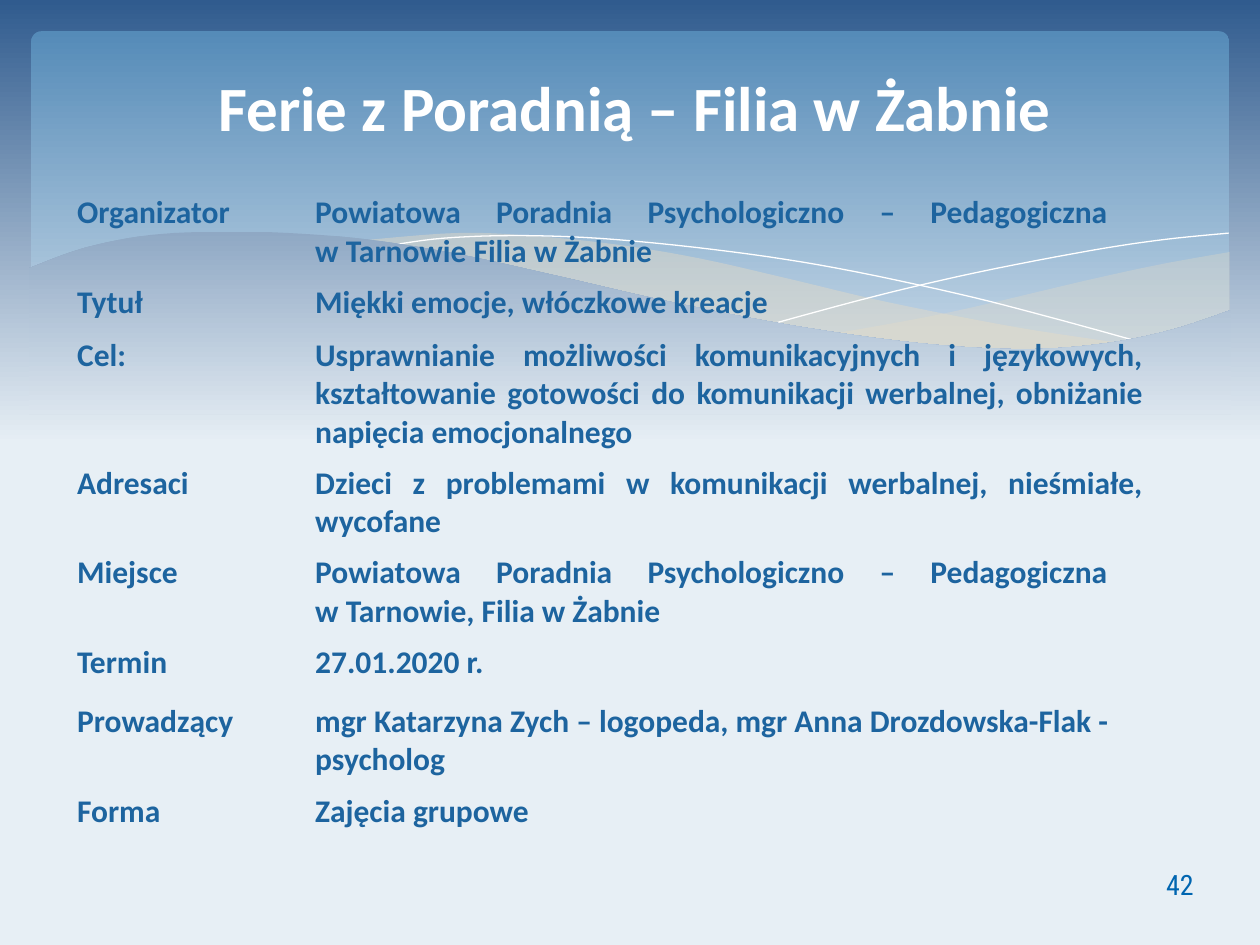
from dataclasses import dataclass

import pptx
import pptx.dml.color
import pptx.enum.shapes
import pptx.enum.text
import pptx.util
from lxml import etree
from pptx.oxml.ns import qn

Cm = pptx.util.Cm
Pt = pptx.util.Pt
RGBColor = pptx.dml.color.RGBColor
Align = pptx.enum.text.PP_ALIGN
Anchor = pptx.enum.text.MSO_ANCHOR
Point = tuple[float, float]

WHITE = RGBColor(0xFF, 0xFF, 0xFF)
SKY_TOP = RGBColor(0x30, 0x5B, 0x8E)
SKY_BOTTOM = RGBColor(0xE7, 0xEF, 0xF5)
PANEL_TOP = RGBColor(0x55, 0x8B, 0xB8)
PANEL_BOTTOM = RGBColor(0xBF, 0xD3, 0xE4)
SAND = RGBColor(0xEB, 0xDD, 0xC3)
TABLE_TEXT = RGBColor(0x1D, 0x64, 0x9F)
NUMBER_TEXT = RGBColor(0x00, 0x65, 0xB0)

PAGE_WIDTH, PAGE_HEIGHT = 25.4, 19.05
SKY_END = 0.47
WAVE_TOP, WAVE_BOTTOM = 4.67, 8.36
NO_GRID_STYLE = "{2D5ABB26-0587-4C30-8999-92F81FD0307C}"


@dataclass
class Ribbon:
    upper: list[Point]
    lower: list[Point]
    opacity: int


@dataclass
class Row:
    label: str
    text: str
    height: float
    align: Align = Align.JUSTIFY


RIBBONS = [
    Ribbon([(24.79, 5.08), (23.39, 5.33), (21.87, 5.66), (19.13, 6.3), (16.79, 6.73)],
           [(16.79, 6.73), (18.26, 6.91), (19.84, 7.04), (21.44, 7.04), (22.99, 6.83),
            (24.1, 6.53), (24.79, 6.27)], 29),
    Ribbon([(22.68, 6.93), (20.5, 6.6), (17.93, 6.1), (15.98, 5.64), (14.1, 5.21),
            (12.42, 4.93), (10.67, 4.75), (9.17, 4.7), (7.26, 4.85)],
           [(7.26, 4.85), (9.19, 5.16), (11.4, 5.64), (14.38, 6.3), (16.51, 6.71),
            (18.34, 6.96), (20.22, 7.06), (21.54, 7.04), (22.68, 6.93)], 40),
]
THREADS = [
    [(7.85, 4.95), (8.97, 4.8), (10.57, 4.75), (12.42, 4.83), (14.78, 5.08),
     (16.89, 5.41), (19.3, 5.92), (21.11, 6.38), (23.04, 6.91)],
    [(15.57, 6.53), (17.65, 5.97), (19.71, 5.49), (22, 5.05), (23.47, 4.83), (24.77, 4.7)],
]
WAVE = [(24.82, 6.25), (23.62, 6.65), (22.23, 6.93), (20.55, 7.04), (18.44, 6.91),
        (15.9, 6.55), (13.44, 6.07), (11.35, 5.59), (9.27, 5.13), (7.42, 4.83),
        (5.84, 4.7), (4.5, WAVE_TOP), (3.02, 4.74), (1.7, 5), (0.58, 5.41)]

ROWS = [
    Row("Organizator", "Powiatowa Poradnia Psychologiczno – Pedagogiczna \n"
        "w Tarnowie Filia w Żabnie", 1.63),
    Row("Tytuł", "Miękki emocje, włóczkowe kreacje", 1.07),
    Row("Cel:", "Usprawnianie możliwości komunikacyjnych i językowych, kształtowanie "
        "gotowości do komunikacji werbalnej, obniżanie napięcia emocjonalnego", 2.31),
    Row("Adresaci", "Dzieci z problemami w komunikacji werbalnej, nieśmiałe, wycofane", 1.63),
    Row("Miejsce", "Powiatowa Poradnia Psychologiczno – Pedagogiczna \n"
        "w Tarnowie, Filia w Żabnie", 1.63),
    Row("Termin", "27.01.2020 r.", 1.19, Align.LEFT),
    Row("Prowadzący", "mgr Katarzyna Zych – logopeda, mgr Anna Drozdowska-Flak - psycholog",
        1.75, Align.LEFT),
    Row("Forma", "Zajęcia grupowe", 2.49),
]


def smooth(knots: list[Point], steps: int = 6) -> list[Point]:
    """Sample a Catmull-Rom curve through the knots."""
    padded = [knots[0], *knots, knots[-1]]
    points = [knots[0]]
    for a, b, c, d in zip(padded, padded[1:], padded[2:], padded[3:]):
        for step in range(1, steps + 1):
            t = step / steps
            points.append(tuple(
                0.5 * (2 * q + (r - p) * t + (2 * p - 5 * q + 4 * r - s) * t**2
                       + (3 * q - p - 3 * r + s) * t**3)
                for p, q, r, s in zip(a, b, c, d)))
    return points


def sky_color(y: float) -> RGBColor:
    """Colour of the page background at a height."""
    share = min(y / (PAGE_HEIGHT * SKY_END), 1)
    return RGBColor(*(round(a + (b - a) * share) for a, b in zip(SKY_TOP, SKY_BOTTOM)))


def fill_downwards(fill, top: RGBColor, bottom: RGBColor, end: float = 1) -> None:
    fill.gradient()
    fill.gradient_angle = 270
    for stop, color, position in zip(fill.gradient_stops, (top, bottom), (0, end)):
        stop.color.rgb = color
        stop.position = position


def draw_outline(page, points: list[Point], closed: bool):
    start, *rest = [(Cm(x), Cm(y)) for x, y in points]
    builder = page.shapes.build_freeform(*start)
    builder.add_line_segments(rest, close=closed)
    shape = builder.convert_to_shape()
    shape.shadow.inherit = False
    if closed:
        shape.line.fill.background()
    else:
        shape.fill.background()
    return shape


def draw_ribbon(page, ribbon: Ribbon) -> None:
    shape = draw_outline(page, smooth(ribbon.upper) + smooth(ribbon.lower), True)
    shape.fill.solid()
    shape.fill.fore_color.rgb = SAND
    color = shape.fill._xPr.find(qn("a:solidFill"))[0]
    etree.SubElement(color, qn("a:alpha"), val=str(ribbon.opacity * 1000))


def draw_scenery(page) -> None:
    fill_downwards(page.background.fill, SKY_TOP, SKY_BOTTOM, SKY_END)
    panel = page.shapes.add_shape(pptx.enum.shapes.MSO_SHAPE.ROUNDED_RECTANGLE,
                                  Cm(0.63), Cm(0.63), Cm(24.15), Cm(6.86))
    panel.adjustments[0] = 0.03
    panel.shadow.inherit = False
    panel.line.fill.background()
    fill_downwards(panel.fill, PANEL_TOP, PANEL_BOTTOM, 0.9)
    for ribbon in RIBBONS:
        draw_ribbon(page, ribbon)
    for thread in THREADS:
        line = draw_outline(page, smooth(thread), False).line
        line.color.rgb = WHITE
        line.width = Pt(0)
    corners = [(WAVE[-1][0], WAVE_BOTTOM), (WAVE[0][0], WAVE_BOTTOM)]
    wave = draw_outline(page, smooth(WAVE) + corners, True)
    fill_downwards(wave.fill, sky_color(WAVE_TOP), sky_color(WAVE_BOTTOM))


def write(frame, text: str, font: str, size: float, color: RGBColor,
          align: Align, bold: bool = True) -> None:
    para = frame.paragraphs[0]
    para.text = text
    para.alignment = align
    para.font.name = font
    para.font.size = Pt(size)
    para.font.bold = bold
    para.font.color.rgb = color


def draw_table(page, rows: list[Row]) -> None:
    height = sum(row.height for row in rows)
    graphic = page.shapes.add_table(len(rows), 2, Cm(1.3), Cm(3.78), Cm(22), Cm(height))
    table = graphic.table
    table.first_row = table.horz_banding = False
    graphic._element.find(".//" + qn("a:tableStyleId")).text = NO_GRID_STYLE
    for column, width in zip(table.columns, (4.8, 17.2)):
        column.width = Cm(width)
    for index, row in enumerate(rows):
        table.rows[index].height = Cm(row.height)
        contents = ((row.label, Align.JUSTIFY), (row.text, row.align))
        for cell, (text, align) in zip(table.rows[index].cells, contents):
            cell.fill.background()
            write(cell.text_frame, text, "Calibri", 18, TABLE_TEXT, align)


def main() -> None:
    deck = pptx.Presentation()
    deck.slide_width, deck.slide_height = Cm(PAGE_WIDTH), Cm(PAGE_HEIGHT)
    page = deck.slides.add_slide(deck.slide_layouts[5])
    draw_scenery(page)

    title = page.shapes.title
    title.left, title.top, title.width, title.height = Cm(1.3), Cm(0.74), Cm(23), Cm(2.8)
    title.text_frame.vertical_anchor = Anchor.MIDDLE
    write(title.text_frame, "Ferie z Poradnią – Filia w Żabnie", "Calibri", 36, WHITE,
          Align.CENTER)
    page.shapes._spTree.append(title._element)  # in front of the scenery

    draw_table(page, ROWS)

    number = page.shapes.add_textbox(Cm(22.17), Cm(17.32), Cm(3.23), Cm(1.02))
    number.text_frame.word_wrap = True
    number.text_frame.vertical_anchor = Anchor.MIDDLE
    write(number.text_frame, "42", "Roboto Condensed", 16, NUMBER_TEXT, Align.CENTER, False)

    deck.save("out.pptx")


if __name__ == "__main__":
    main()
